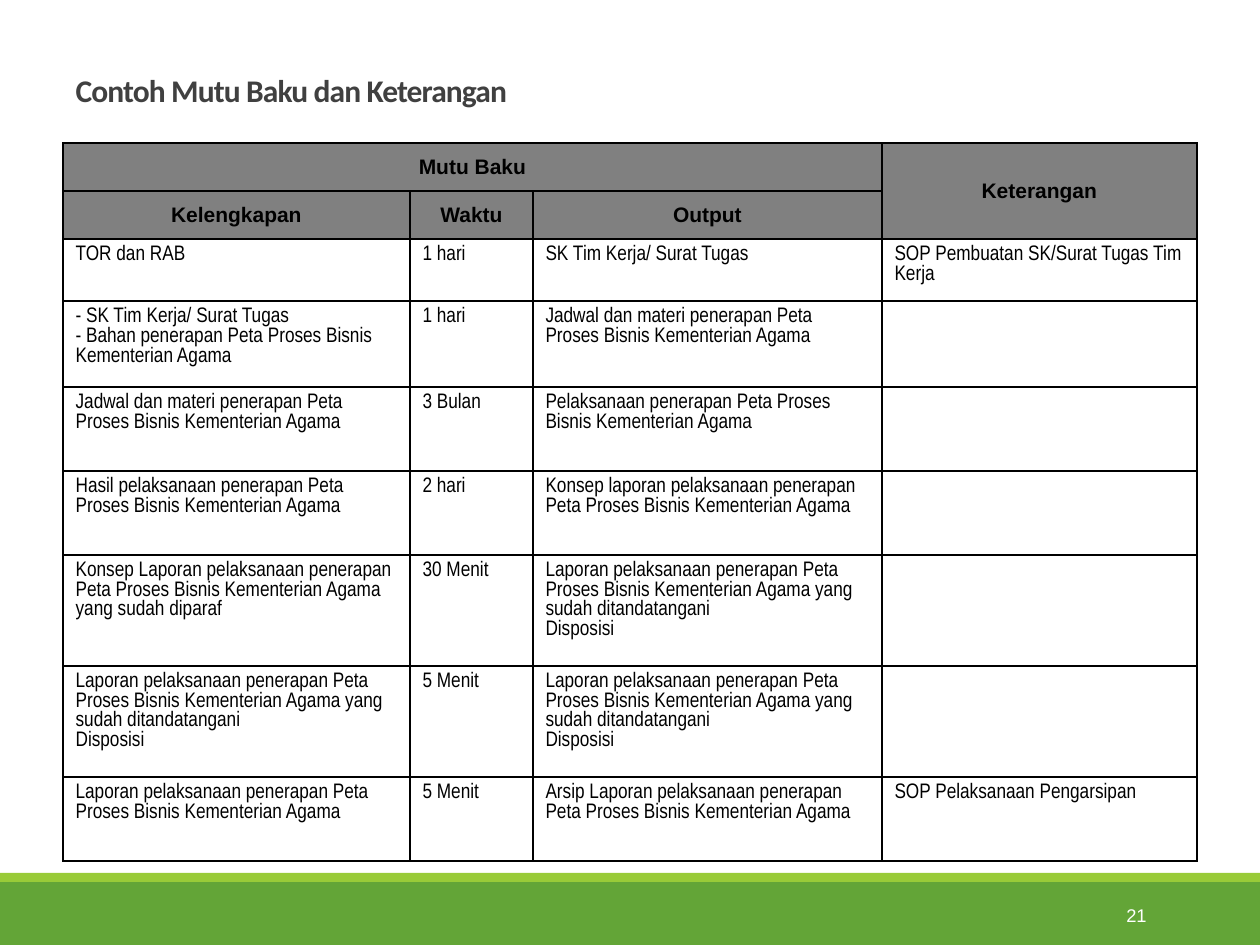
from lxml import etree
from pptx import Presentation
from pptx.dml.color import RGBColor
from pptx.enum.shapes import MSO_SHAPE
from pptx.enum.text import MSO_ANCHOR, MSO_AUTO_SIZE, PP_ALIGN
from pptx.oxml.ns import qn
from pptx.util import Pt

RECTANGLE = MSO_SHAPE.RECTANGLE
TOP, MIDDLE, BOTTOM = MSO_ANCHOR.TOP, MSO_ANCHOR.MIDDLE, MSO_ANCHOR.BOTTOM
LEFT, CENTER, RIGHT = PP_ALIGN.LEFT, PP_ALIGN.CENTER, PP_ALIGN.RIGHT
NO_AUTOFIT = MSO_AUTO_SIZE.NONE

BLACK = RGBColor(0x00, 0x00, 0x00)
WHITE = RGBColor(0xFF, 0xFF, 0xFF)
DARK_GREY = RGBColor(0x40, 0x40, 0x40)
GREY = RGBColor(0x80, 0x80, 0x80)
GREEN = RGBColor(0x63, 0xA5, 0x37)
LIME = RGBColor(0x99, 0xCB, 0x38)

# Content
TITLE = "Contoh Mutu Baku dan Keterangan"
PAGE_NUMBER = "21"
PROCESS = "Proses Bisnis Kementerian Agama"
PLAN = f"Jadwal dan materi penerapan Peta {PROCESS}"
REPORT = f"Laporan pelaksanaan penerapan Peta {PROCESS}"
SIGNED_REPORT = f"{REPORT} yang sudah ditandatangani\nDisposisi"
HEADER_ROWS = [
    ("Mutu Baku", "", "", "Keterangan"),
    ("Kelengkapan", "Waktu", "Output", ""),
]
BODY_ROWS = [
    ("TOR dan RAB", "1 hari", "SK Tim Kerja/ Surat Tugas",
     "SOP Pembuatan SK/Surat Tugas Tim Kerja"),
    (f"- SK Tim Kerja/ Surat Tugas\n- Bahan penerapan Peta {PROCESS}",
     "1 hari", PLAN, ""),
    (PLAN, "3 Bulan", f"Pelaksanaan penerapan Peta {PROCESS}", ""),
    (f"Hasil pelaksanaan penerapan Peta {PROCESS}", "2 hari",
     f"Konsep laporan pelaksanaan penerapan Peta {PROCESS}", ""),
    (f"Konsep {REPORT} yang sudah diparaf", "30 Menit", SIGNED_REPORT, ""),
    (SIGNED_REPORT, "5 Menit", SIGNED_REPORT, ""),
    (REPORT, "5 Menit", f"Arsip {REPORT}", "SOP Pelaksanaan Pengarsipan"),
]
MERGES = [((0, 0), (0, 2)), ((0, 3), (1, 3))]

# Geometry in px, 126 to the inch
EMU_PER_PX = 914400 // 126
PAGE_SIZE = (1260, 945)
BANDS = [((0, 882, 1260, 63), GREEN), ((0, 873, 1260, 9), LIME)]
TITLE_BOX = (63, 42, 1134, 73)
NUMBER_BOX = (1023, 890, 136, 50)
TABLE_ORIGIN = (63, 143)
COLUMN_WIDTHS = [347, 123, 349, 315]
ROW_HEIGHTS = [48, 48, 62, 86, 84, 84, 111, 111, 84]

# Text formats
TITLE_FONT = {"name": "Calibri", "size": Pt(18), "bold": True}
NUMBER_FONT = {"name": "Arial", "size": Pt(10.5), "bold": False}
HEADER_FONT = {"name": "Arial", "size": Pt(12), "bold": True}
BODY_FONT = {"name": "Arial Narrow", "size": Pt(12), "bold": False}


def emu(*lengths):
    return [length * EMU_PER_PX for length in lengths]


def format_text(frame, font, color, align):
    for para in frame.paragraphs:
        para.alignment = align
        for span in para.runs:
            for name, value in font.items():
                setattr(span.font, name, value)
            span.font.color.rgb = color


def add_borders(cell):
    properties = cell._tc.get_or_add_tcPr()
    for side in ("lnL", "lnR", "lnT", "lnB"):
        line = etree.SubElement(properties, qn(f"a:{side}"), w=str(Pt(1)))
        fill = etree.SubElement(line, qn("a:solidFill"))
        etree.SubElement(fill, qn("a:srgbClr"), val=str(BLACK))


def add_bands(page):
    for place, color in BANDS:
        band = page.shapes.add_shape(RECTANGLE, *emu(*place))
        band.shadow.inherit = False
        band.fill.solid()
        band.fill.fore_color.rgb = color
        band.line.fill.background()


def add_title(page):
    title = page.shapes.title
    title.left, title.top, title.width, title.height = emu(*TITLE_BOX)
    frame = title.text_frame
    frame.text = TITLE
    frame.auto_size = NO_AUTOFIT
    frame.vertical_anchor = BOTTOM
    format_text(frame, TITLE_FONT, DARK_GREY, LEFT)
    para = frame.paragraphs[0]
    para.line_spacing = 0.85
    para.runs[0].font._element.set("spc", "-50")


def add_quality_table(page):
    rows = HEADER_ROWS + BODY_ROWS
    size = (sum(COLUMN_WIDTHS), sum(ROW_HEIGHTS))
    table = page.shapes.add_table(
        len(rows), len(COLUMN_WIDTHS), *emu(*TABLE_ORIGIN, *size)).table
    for column, width in zip(table.columns, emu(*COLUMN_WIDTHS)):
        column.width = width
    for row, height in zip(table.rows, emu(*ROW_HEIGHTS)):
        row.height = height

    for row_index, texts in enumerate(rows):
        is_header = row_index < len(HEADER_ROWS)
        for column_index, text in enumerate(texts):
            cell = table.cell(row_index, column_index)
            cell.text = text
            cell.vertical_anchor = MIDDLE if is_header else TOP
            format_text(cell.text_frame, HEADER_FONT if is_header else BODY_FONT,
                        BLACK, CENTER if is_header else LEFT)
            add_borders(cell)
            if is_header:
                cell.fill.solid()
                cell.fill.fore_color.rgb = GREY
            else:
                cell.fill.background()
    for first, last in MERGES:
        table.cell(*first).merge(table.cell(*last))


def add_page_number(page):
    frame = page.shapes.add_textbox(*emu(*NUMBER_BOX)).text_frame
    frame.word_wrap = True
    frame.vertical_anchor = MIDDLE
    frame.text = PAGE_NUMBER
    format_text(frame, NUMBER_FONT, WHITE, RIGHT)


def main():
    deck = Presentation()
    deck.slide_width, deck.slide_height = emu(*PAGE_SIZE)
    page = deck.slides.add_slide(deck.slide_layouts[5])
    add_bands(page)
    add_title(page)
    add_quality_table(page)
    add_page_number(page)
    deck.save("out.pptx")


if __name__ == "__main__":
    main()
